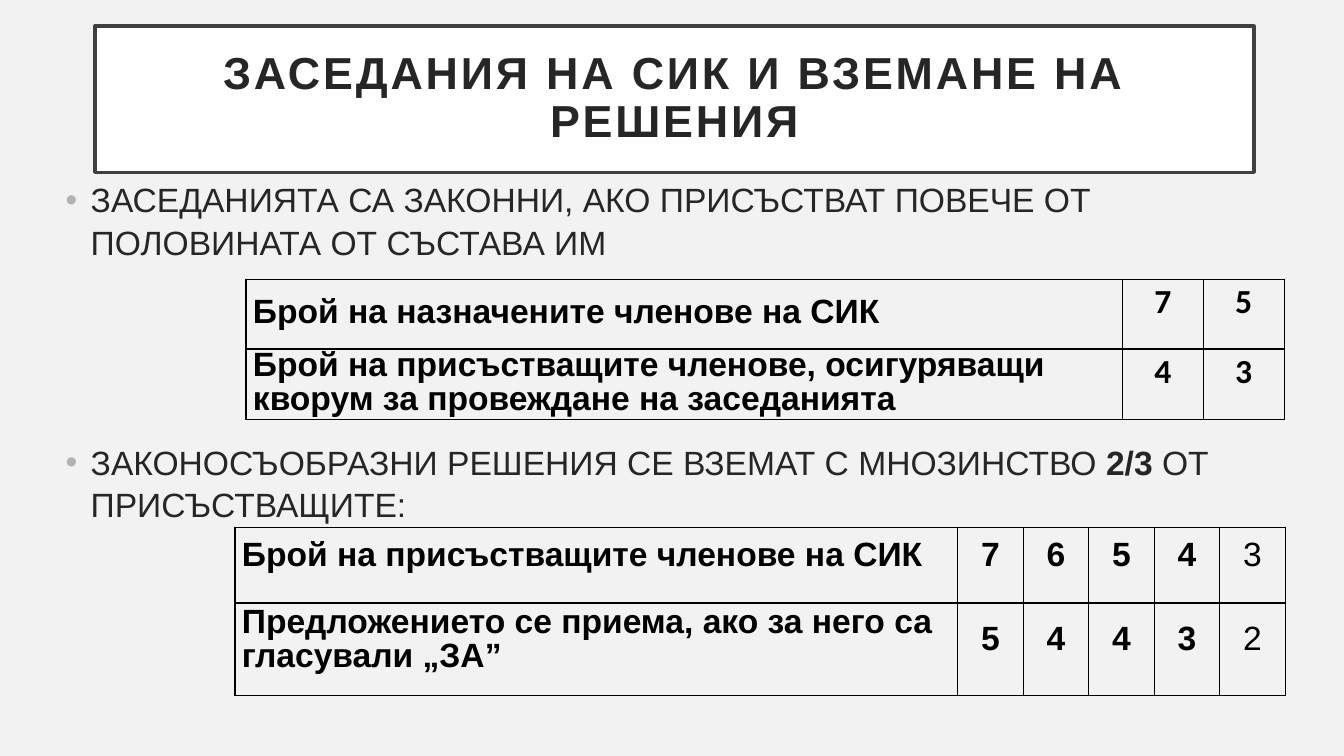
from lxml.etree import SubElement
from pptx import Presentation
from pptx.dml.color import RGBColor
from pptx.enum.text import MSO_ANCHOR as Anchor, MSO_AUTO_SIZE as AutoSize, PP_ALIGN as Align
from pptx.oxml.ns import qn
from pptx.util import Pt

COLORS = {"background": "F2F2F2", "panel": "FFFFFF", "frame": "404040",
          "text": "262626", "bullet": "B2B2B2", "table": "000000"}


def rgb(name):
    return RGBColor.from_string(COLORS[name])


def add_text(paragraph, text, size=24, font="Arial", color="text", bold=False, spacing=0):
    """Append a formatted run; spacing is the letter spacing in points."""
    run = paragraph.add_run()
    run.text = text
    run.font.size, run.font.name, run.font.bold = Pt(size), font, bold
    run.font.color.rgb = rgb(color)
    if spacing:
        run.font._element.set("spc", str(spacing * 100))


def place(shape, left, top, width, height):
    shape.left, shape.top = Pt(left), Pt(top)
    shape.width, shape.height = Pt(width), Pt(height)


def set_margins(box, horizontal, vertical):
    box.margin_left = box.margin_right = Pt(horizontal)
    box.margin_top = box.margin_bottom = Pt(vertical)


def add_solid_color(parent, tag, name):
    holder = SubElement(parent, qn(tag))
    SubElement(holder, qn("a:srgbClr"), val=COLORS[name])


class MeetingSlide:
    def __init__(self, deck):
        self.slide = deck.slides.add_slide(deck.slide_layouts[1])
        fill = self.slide.background.fill
        fill.solid()
        fill.fore_color.rgb = rgb("background")

    def title(self, text, *box):
        heading = self.slide.shapes.title
        place(heading, *box)
        heading.fill.solid()
        heading.fill.fore_color.rgb = rgb("panel")
        heading.line.color.rgb = rgb("frame")
        heading.line.width = Pt(2.5)
        frame = heading.text_frame
        frame.word_wrap, frame.auto_size = True, AutoSize.NONE
        frame.vertical_anchor = Anchor.MIDDLE
        set_margins(frame, 14.4, 14.4)
        paragraph = frame.paragraphs[0]
        paragraph.alignment, paragraph.line_spacing = Align.CENTER, 0.9
        add_text(paragraph, text, size=32, bold=True, spacing=2)

    def bullets(self, rules, *box):
        """Each rule is (space before, [(text, bold), ...])."""
        body = self.slide.placeholders[1]
        place(body, *box)
        frame = body.text_frame
        frame.word_wrap, frame.auto_size = True, AutoSize.NONE
        frame.vertical_anchor = Anchor.TOP
        for index, (gap, parts) in enumerate(rules):
            paragraph = frame.add_paragraph() if index else frame.paragraphs[0]
            paragraph.alignment = Align.LEFT
            paragraph.line_spacing, paragraph.space_before = 1.05, Pt(gap)
            props = paragraph._p.get_or_add_pPr()
            props.set("marL", str(Pt(18)))
            props.set("indent", str(-Pt(18)))
            add_solid_color(props, "a:buClr", "bullet")
            SubElement(props, qn("a:buFont"), typeface="Arial")
            SubElement(props, qn("a:buChar"), char="•")
            for text, bold in parts:
                add_text(paragraph, text, bold=bold)

    def table(self, rows, left, top, widths, heights, font="Arial", light_column=None):
        """Each row is ([(label line, leading), ...], counts)."""
        frame = self.slide.shapes.add_table(len(heights), len(widths), Pt(left), Pt(top),
                                            Pt(sum(widths)), Pt(sum(heights)))
        grid = frame.table
        grid.first_row = grid.horz_banding = False
        for column, width in zip(grid.columns, widths):
            column.width = Pt(width)
        for r, (label, counts) in enumerate(rows):
            grid.rows[r].height = Pt(heights[r])
            self.cell(grid.cell(r, 0), r, label)
            for c, count in enumerate(counts, 1):
                self.cell(grid.cell(r, c), r, [(count, 12)], Align.CENTER,
                          font=font, bold=c != light_column)

    def cell(self, cell, row, lines, align=Align.LEFT, font="Arial", bold=True):
        set_margins(cell, 5, 0)
        cell.vertical_anchor = Anchor.MIDDLE
        middle_edge = "B" if row == 0 else "T"
        for side in "LRTB":
            width = 1.5 if side == middle_edge else 1
            edge = SubElement(cell._tc.get_or_add_tcPr(), qn("a:ln" + side), w=str(Pt(width)))
            add_solid_color(edge, "a:solidFill", "table")
        cell.fill.background()
        for index, (text, leading) in enumerate(lines):
            paragraph = cell.text_frame.add_paragraph() if index else cell.text_frame.paragraphs[0]
            paragraph.alignment, paragraph.line_spacing = align, Pt(leading)
            add_text(paragraph, text, font=font, color="table", bold=bold)


def main():
    deck = Presentation()
    deck.slide_width, deck.slide_height = Pt(960), Pt(540)
    meeting = MeetingSlide(deck)
    meeting.title("ЗАСЕДАНИЯ НА СИК И ВЗЕМАНЕ НА РЕШЕНИЯ", 67.7, 18.7, 828, 104.4)
    meeting.bullets([
        (10, [("ЗАСЕДАНИЯТА СА ЗАКОННИ, АКО ПРИСЪСТВАТ ПОВЕЧЕ ОТ ПОЛОВИНАТА ОТ СЪСТАВА ИМ", False)]),
        (127, [("ЗАКОНОСЪОБРАЗНИ РЕШЕНИЯ СЕ ВЗЕМАТ С МНОЗИНСТВО ", False),
               ("2/3", True), (" ОТ ПРИСЪСТВАЩИТЕ:", False)]),
    ], 39.6, 123.1, 854.6, 363.6)
    meeting.table([
        ([("Брой на присъстващите членове на СИК", 12)], "76543"),
        ([("Предложението се приема, ако за него са", 12), ("гласували „ЗА”", 24)], "54432"),
    ], 167.8, 376.6, [516.2] + [46.8] * 5, [54, 66.2], light_column=5)
    meeting.table([
        ([("Брой на назначените членове на СИК", 24)], "75"),
        ([("Брой на присъстващите членове, осигуряващи", 24),
          ("кворум за провеждане на заседанията", 24)], "43"),
    ], 175.7, 199.4, [626] + [57.8] * 2, [49.7, 50.4], font="Calibri")
    deck.save("out.pptx")


if __name__ == "__main__":
    main()
